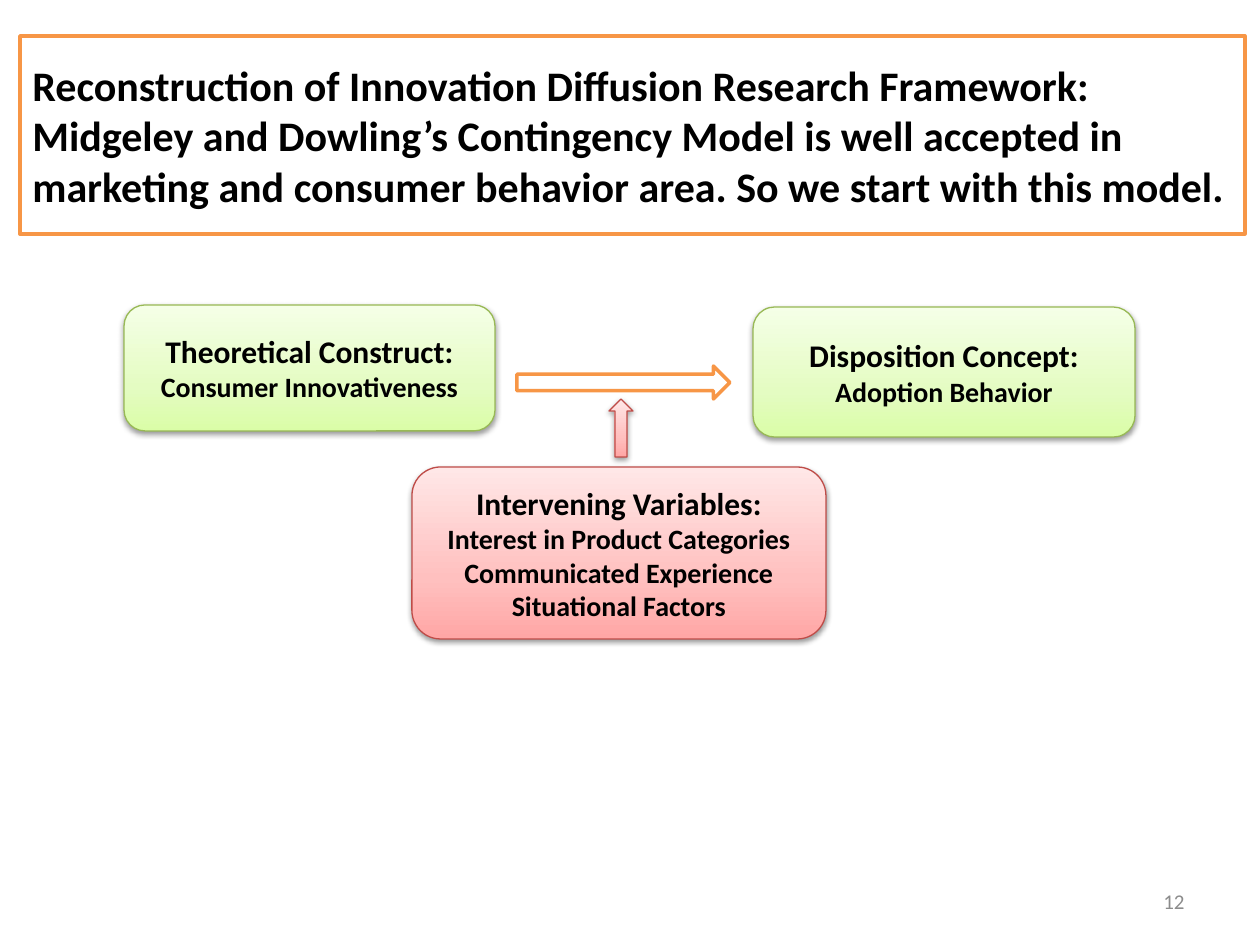
from dataclasses import dataclass

from lxml.etree import SubElement
from pptx import Presentation
from pptx.dml.color import RGBColor
from pptx.enum.shapes import MSO_SHAPE as Preset
from pptx.enum.text import MSO_ANCHOR as Anchor, PP_ALIGN as Align
from pptx.oxml.ns import qn
from pptx.util import Emu, Pt

PX = 914400 / 126
FONT = "Calibri"
BLACK = RGBColor(0x00, 0x00, 0x00)
WHITE = RGBColor(0xFF, 0xFF, 0xFF)
GRAY = RGBColor(0x8C, 0x8C, 0x8C)
ORANGE = RGBColor(0xF7, 0x96, 0x46)


@dataclass(frozen=True)
class Theme:
    """Gradient colours from bottom to top, and the outline colour."""
    bottom: RGBColor
    middle: RGBColor
    top: RGBColor
    outline: RGBColor


@dataclass(frozen=True)
class Area:
    left: int
    top: int
    width: int
    height: int

    def emu(self) -> list[Emu]:
        return [px(n) for n in (self.left, self.top, self.width, self.height)]


@dataclass(frozen=True)
class Concept:
    area: Area
    theme: Theme
    heading: str
    items: tuple[str, ...]


GREEN = Theme(RGBColor(0xDA, 0xFD, 0xA7), RGBColor(0xE4, 0xFC, 0xC2),
              RGBColor(0xF5, 0xFF, 0xE7), RGBColor(0x98, 0xB9, 0x55))
RED = Theme(RGBColor(0xFF, 0xA6, 0xA5), RGBColor(0xFF, 0xC0, 0xBF),
            RGBColor(0xFF, 0xE7, 0xE7), RGBColor(0xBF, 0x4C, 0x48))

TITLE = (
    "Reconstruction of Innovation Diffusion Research Framework:",
    "Midgeley and Dowling’s Contingency Model is well accepted in marketing "
    "and consumer behavior area. So we start with this model.",
)
CONCEPTS = (
    Concept(Area(753, 307, 382, 130), GREEN, "Disposition Concept:",
            ("Adoption Behavior",)),
    Concept(Area(124, 305, 371, 126), GREEN, "Theoretical Construct:",
            ("Consumer Innovativeness",)),
    Concept(Area(412, 467, 414, 172), RED, "Intervening Variables:",
            ("Interest in Product Categories", "Communicated Experience",
             "Situational Factors")),
)


def px(length: int) -> Emu:
    return Emu(round(length * PX))


def write(box, lines, *, sizes, align=Align.LEFT, color=BLACK, bold=True) -> None:
    """Fill a box with one paragraph per line, each with its own size."""
    frame = box.text_frame
    frame.word_wrap = True
    frame.vertical_anchor = Anchor.MIDDLE
    for index, (line, size) in enumerate(zip(lines, sizes)):
        para = frame.add_paragraph() if index else frame.paragraphs[0]
        para.alignment = align
        span = para.add_run()
        span.text = line
        span.font.name = FONT
        span.font.size = Pt(size)
        span.font.bold = bold
        span.font.color.rgb = color


def add_outlined(page, preset: Preset, area: Area):
    """Add a white shape with an orange outline."""
    box = page.shapes.add_shape(preset, *area.emu())
    box.shadow.inherit = False
    box.fill.solid()
    box.fill.fore_color.rgb = WHITE
    box.line.color.rgb = ORANGE
    box.line.width = Pt(2)
    return box


def add_shaded(page, preset: Preset, area: Area, theme: Theme):
    """Add a shape with a vertical gradient and a soft shadow below."""
    box = page.shapes.add_shape(preset, *area.emu())
    box.fill.gradient()
    box.fill.gradient_angle = 90
    stops = box._element.spPr.find(qn("a:gradFill")).find(qn("a:gsLst"))
    stops.clear()
    for position, color in ((0, theme.bottom), (35, theme.middle), (100, theme.top)):
        stop = SubElement(stops, qn("a:gs"), pos=str(position * 1000))
        SubElement(stop, qn("a:srgbClr"), val=str(color))
    box.line.color.rgb = theme.outline
    box.line.width = Pt(0.75)
    box.shadow.inherit = False
    effects = box._element.spPr.find(qn("a:effectLst"))
    shadow = SubElement(effects, qn("a:outerShdw"), blurRad="40000", dist="20000",
                        dir="5400000", rotWithShape="0")
    shade = SubElement(shadow, qn("a:srgbClr"), val=str(BLACK))
    SubElement(shade, qn("a:alpha"), val="38000")
    return box


def add_concept(page, concept: Concept) -> None:
    box = add_shaded(page, Preset.ROUNDED_RECTANGLE, concept.area, concept.theme)
    write(box, (concept.heading, *concept.items),
          sizes=(18, *[16] * len(concept.items)), align=Align.CENTER)


def main() -> None:
    deck = Presentation()
    deck.slide_width, deck.slide_height = px(1260), px(945)
    page = deck.slides.add_slide(deck.slide_layouts[6])

    number = page.shapes.add_textbox(*Area(903, 876, 294, 50).emu())
    write(number, ("12",), sizes=(12,), align=Align.RIGHT, color=GRAY, bold=False)

    title = add_outlined(page, Preset.RECTANGLE, Area(20, 36, 1225, 198))
    write(title, TITLE, sizes=(24, 24))

    for concept in CONCEPTS:
        add_concept(page, concept)

    add_outlined(page, Preset.RIGHT_ARROW, Area(517, 366, 213, 33))
    add_shaded(page, Preset.UP_ARROW, Area(609, 399, 24, 58), RED)
    deck.save("out.pptx")


if __name__ == "__main__":
    main()
